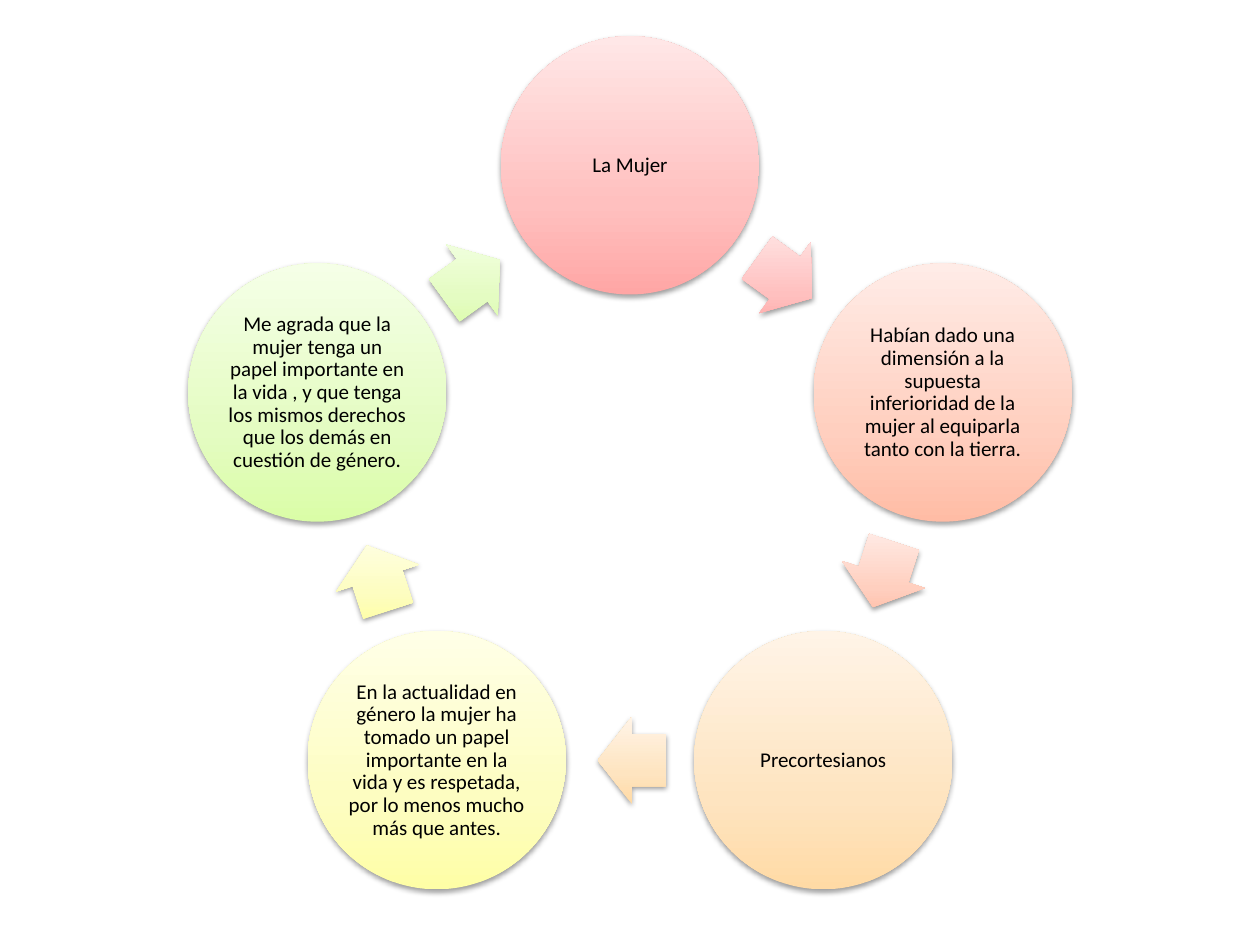
import math

from lxml import etree
from pptx import Presentation
from pptx.dml.color import RGBColor
from pptx.enum import shapes, text
from pptx.oxml import parse_xml
from pptx.oxml.ns import nsdecls
from pptx.util import Pt

COLORS = {
    "text": "000000",
    "shadow": "000000",
    "red": ("FFA6A5", "FFC0BF", "FFE7E7"),
    "coral": ("FFBCA5", "FFCFBF", "FFECE7"),
    "orange": ("FFDAA5", "FEE4C0", "FFF4E7"),
    "yellow": ("FEFEA6", "FDFDC1", "FFFFE7"),
    "green": ("DAFDA7", "E4FCC2", "F5FFE7"),
}
STEPS = [
    ("red", "La Mujer"),
    ("coral", "Habían dado una dimensión a la supuesta inferioridad de la mujer "
              "al equiparla tanto con la tierra."),
    ("orange", "Precortesianos"),
    ("yellow", "En la actualidad en género la mujer ha tomado un papel importante "
               "en la vida y es respetada, por lo menos mucho más que antes."),
    ("green", "Me agrada que la mujer tenga un papel importante en la vida , y que "
              "tenga los mismos derechos que los demás en cuestión de género."),
]
STOPS = (0, 35, 100)
DIAMETER = 147.6
ARROW_W, ARROW_H = 39.2, 49.8
ARROW_RADIUS = 152
ARROW_LAG = 0.4  # degrees by which an arrow sits before the middle of its gap


def paint(sp, color):
    """Give a shape an upright three-stop gradient, no line and a soft shadow."""
    sp.line.fill.background()
    stops = "".join(
        f'<a:gs pos="{pos * 1000}"><a:srgbClr val="{rgb}"/></a:gs>'
        for pos, rgb in zip(STOPS, COLORS[color]))
    gradient = parse_xml(
        f'<a:gradFill {nsdecls("a")} rotWithShape="0"><a:gsLst>{stops}</a:gsLst>'
        '<a:lin ang="16200000" scaled="0"/></a:gradFill>')
    sp._element.spPr.find("{*}prstGeom").addnext(gradient)
    sp.shadow.inherit = False
    effects = sp._element.spPr.find("{*}effectLst")
    effects.append(parse_xml(
        f'<a:outerShdw {nsdecls("a")} blurRad="{Pt(3.1)}" dist="{Pt(1.6)}" '
        f'dir="5400000" rotWithShape="0"><a:srgbClr val="{COLORS["shadow"]}">'
        '<a:alpha val="38000"/></a:srgbClr></a:outerShdw>'))


def add_centred(slide, kind, x, y, w, h, color):
    sp = slide.shapes.add_shape(kind, Pt(x - w / 2), Pt(y - h / 2), Pt(w), Pt(h))
    paint(sp, color)
    return sp


def add_step(slide, x, y, color, label):
    sp = add_centred(slide, shapes.MSO_SHAPE.OVAL, x, y, DIAMETER, DIAMETER, color)
    tf = sp.text_frame
    tf.word_wrap = True
    tf.vertical_anchor = text.MSO_ANCHOR.MIDDLE
    tf.margin_left = tf.margin_right = tf.margin_top = tf.margin_bottom = Pt(1.2)
    p = tf.paragraphs[0]
    p.text = label
    p.alignment = text.PP_ALIGN.CENTER
    p.line_spacing = 0.9
    p.font.name = "Calibri"
    p.font.size = Pt(12)
    p.font.color.rgb = RGBColor.from_string(COLORS["text"])


def add_arrow(slide, x, y, color, rotation):
    sp = add_centred(slide, shapes.MSO_SHAPE.RIGHT_ARROW, x, y, ARROW_W, ARROW_H, color)
    sp.adjustments[0], sp.adjustments[1] = 0.6, 0.5
    sp.rotation = rotation


def add_cycle(slide, left, top, width, height):
    """Place the steps clockwise on a ring, each followed by an arrow."""
    sector = 360 / len(STEPS)
    # The box spans the top circle down to the foot of the lowest circles.
    radius = (height - DIAMETER) / (1 + math.cos(math.radians(sector / 2)))
    cx, cy = left + width / 2, top + DIAMETER / 2 + radius

    def on_ring(r, degrees):
        a = math.radians(degrees)
        return cx + r * math.sin(a), cy - r * math.cos(a)

    for i, (color, label) in enumerate(STEPS):
        middle = (i + 0.5) * sector
        add_step(slide, *on_ring(radius, i * sector), color, label)
        add_arrow(slide, *on_ring(ARROW_RADIUS, middle - ARROW_LAG), color, middle)


def main():
    prs = Presentation()
    prs.slide_width, prs.slide_height = Pt(720), Pt(540)
    slide = prs.slides.add_slide(prs.slide_layouts[6])
    add_cycle(slide, 107.3, 20.7, 505.4, 487.5)
    prs.save("out.pptx")


if __name__ == "__main__":
    main()
